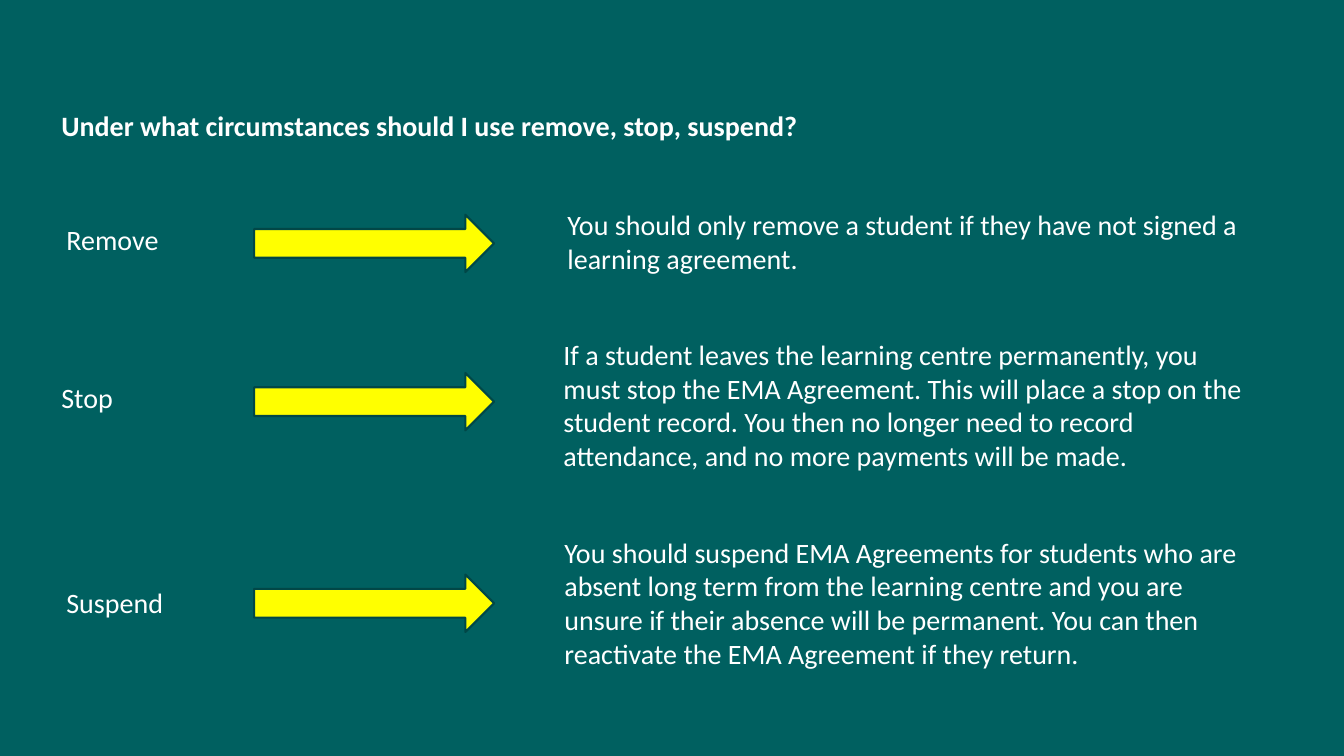
from dataclasses import dataclass

from pptx import Presentation
from pptx.dml.color import RGBColor
from pptx.enum.shapes import MSO_SHAPE
from pptx.enum.text import MSO_AUTO_SIZE
from pptx.util import Inches, Pt


@dataclass(frozen=True)
class Theme:
    background: RGBColor = RGBColor(0x00, 0x60, 0x60)
    text: RGBColor = RGBColor(0xFF, 0xFF, 0xFF)
    arrow: RGBColor = RGBColor(0xFF, 0xFF, 0x00)
    arrow_line: RGBColor = RGBColor(0x00, 0x47, 0x47)
    font: str = "Calibri"
    size: Pt = Pt(20)
    line_width: Pt = Pt(1.5)


@dataclass(frozen=True)
class Box:
    left: float
    top: float
    width: float
    height: float

    def inside(self, left, top, width, height):
        """Return a box offset from this one's top left corner."""
        return Box(self.left + left, self.top + top, width, height)

    def lengths(self):
        return [Inches(n) for n in (self.left, self.top, self.width, self.height)]


@dataclass(frozen=True)
class Action:
    """One row; label and advice are boxes relative to the row."""
    name: str
    advice: str
    row: Box
    label_box: Box
    advice_box: Box


THEME = Theme()
TITLE = "Under what circumstances should I use remove, stop, suspend?"
ARROW_LEFT, ARROW_WIDTH, ARROW_HEIGHT = 2.01, 2.38, 0.57

ACTIONS = [
    Action("Remove",
           "You should only remove a student if they have not signed a "
           "learning agreement.",
           Box(0.51, 2.01, 12.06, 0.81),
           Box(0.05, 0.15, 1.96, 0.44), Box(5.02, 0, 7.04, 0.77)),
    Action("Stop",
           "If a student leaves the learning centre permanently, you must stop "
           "the EMA Agreement. This will place a stop on the student record. You "
           "then no longer need to record attendance, and no more payments will "
           "be made.",
           Box(0.51, 3.3, 12.06, 1.37),
           Box(0, 0.43, 1.86, 0.44), Box(4.98, 0, 7.07, 1.45)),
    Action("Suspend",
           "You should suspend EMA Agreements for students who are absent long "
           "term from the learning centre and you are unsure if their absence "
           "will be permanent. You can then reactivate the EMA Agreement if they "
           "return.",
           Box(0.51, 5.26, 12.06, 1.45),
           Box(0.05, 0.5, 1.86, 0.44), Box(4.99, 0, 7.07, 1.45)),
]


def add_text(page, box, words, bold=False):
    frame = page.shapes.add_textbox(*box.lengths()).text_frame
    frame.word_wrap = True
    frame.auto_size = MSO_AUTO_SIZE.SHAPE_TO_FIT_TEXT
    span = frame.paragraphs[0].add_run()
    span.text = words
    span.font.name = THEME.font
    span.font.size = THEME.size
    span.font.bold = bold
    span.font.color.rgb = THEME.text


def add_arrow(page, box):
    arrow = page.shapes.add_shape(MSO_SHAPE.RIGHT_ARROW, *box.lengths())
    arrow.shadow.inherit = False
    arrow.fill.solid()
    arrow.fill.fore_color.rgb = THEME.arrow
    arrow.line.color.rgb = THEME.arrow_line
    arrow.line.width = THEME.line_width


def add_action(page, action):
    """Place label, arrow and advice, with the arrow halfway down the row."""
    row, label, advice = action.row, action.label_box, action.advice_box
    add_text(page, row.inside(label.left, label.top, label.width, label.height),
             action.name)
    arrow_top = (row.height - ARROW_HEIGHT) / 2
    add_arrow(page, row.inside(ARROW_LEFT, arrow_top, ARROW_WIDTH, ARROW_HEIGHT))
    add_text(page, row.inside(advice.left, advice.top, advice.width, advice.height),
             action.advice)


def main():
    deck = Presentation()
    deck.slide_width, deck.slide_height = Inches(13.33), Inches(7.5)
    page = deck.slides.add_slide(deck.slide_layouts[6])
    page.background.fill.solid()
    page.background.fill.fore_color.rgb = THEME.background
    add_text(page, Box(0.51, 1.03, 12.05, 0.44), TITLE, bold=True)
    for action in ACTIONS:
        add_action(page, action)
    deck.save("out.pptx")


if __name__ == "__main__":
    main()
